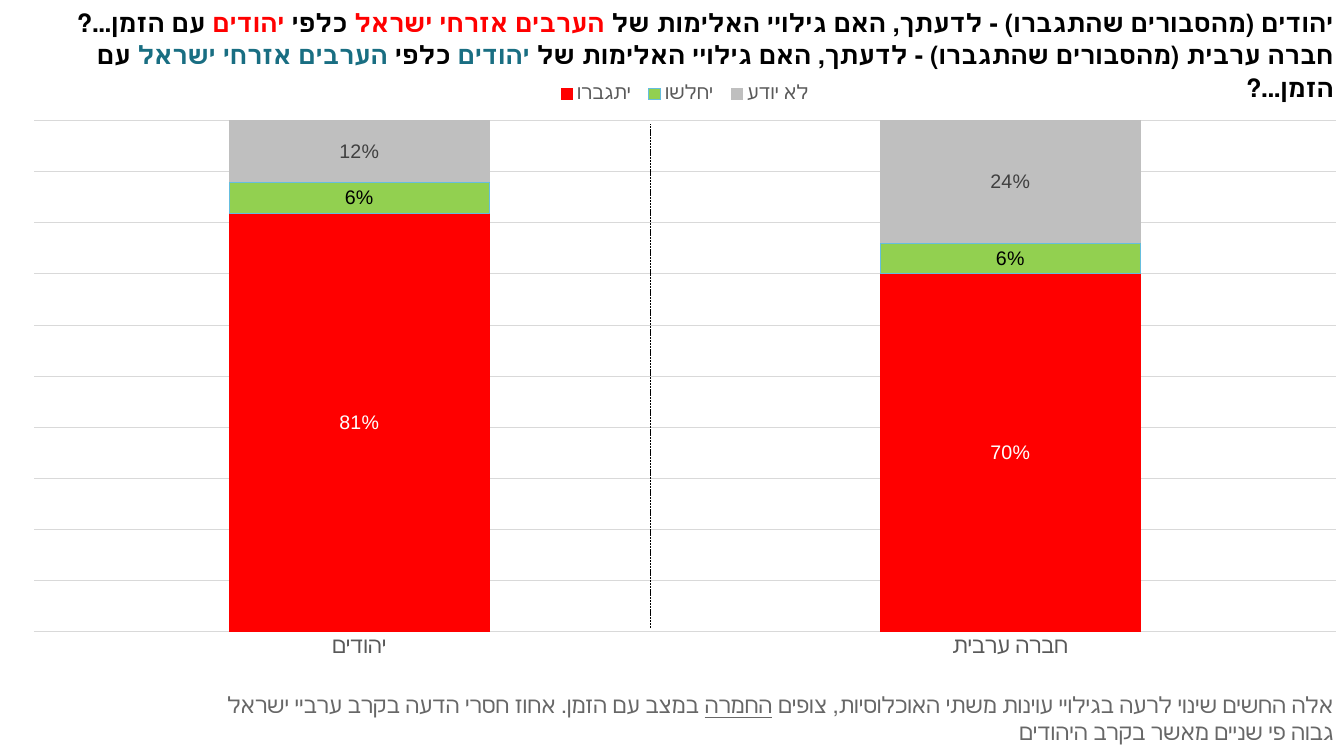
from lxml.etree import SubElement
from pptx import Presentation
from pptx.chart.data import CategoryChartData as ChartData
from pptx.dml.color import RGBColor as Rgb
from pptx.enum.chart import XL_CHART_TYPE as Kind, XL_LABEL_POSITION as Spot
from pptx.enum.chart import XL_LEGEND_POSITION as Side, XL_TICK_LABEL_POSITION as Tick
from pptx.enum.chart import XL_TICK_MARK as Mark
from pptx.enum.dml import MSO_LINE as Dash
from pptx.enum.shapes import MSO_CONNECTOR as Link
from pptx.enum.text import MSO_ANCHOR as Anchor, MSO_AUTO_SIZE as Fit, PP_ALIGN as Align
from pptx.oxml import parse_xml
from pptx.oxml.ns import qn
from pptx.util import Cm, Pt

HUE = {"black": "000000", "red": "FF0000", "teal": "196E82", "green": "92D050",
       "sky": "65BEDE", "gray": "BFBFBF", "grid": "D9D9D9", "label": "595959",
       "dark": "404040", "note": "676767", "white": "FFFFFF"}
FACE = "Arial"
ASK = [
    [("יהודים (מהסבורים שהתגברו) - לדעתך, האם גילויי האלימות של ", "black"),
     ("הערבים אזרחי ישראל ", "red"), ("כלפי ", "black"),
     ("יהודים ", "red"), ("עם הזמן...?", "black")],
    [("חברה ערבית (מהסבורים שהתגברו) - לדעתך, האם גילויי האלימות של ", "black"),
     ("יהודים", "teal"), (" כלפי ", "black"),
     ("הערבים אזרחי ישראל", "teal"), (" עם הזמן...?", "black")],
]
NOTE = ["אלה החשים שינוי לרעה בגילויי עוינות משתי האוכלוסיות, צופים ", "החמרה",
        " במצב עם הזמן. אחוז חסרי הדעה בקרב ערביי ישראל גבוה פי שניים מאשר בקרב היהודים"]
GROUPS = ["יהודים", "חברה ערבית"]
SERIES = [("יתגברו ", (0.81, 0.7), "red", "white"),
          ("יחלשו ", (0.06, 0.06), "green", "black"),
          ("לא יודע", (0.12, 0.24), "gray", "dark")]


def tint(name):
    return Rgb.from_string(HUE[name])


def style(font, size, hue):
    font.size = Pt(size)
    font.name = FACE
    font.color.rgb = tint(hue)


def stroke(line, hue, width):
    line.color.rgb = tint(hue)
    line.width = Pt(width)


def add_run(para, text, size, hue):
    run = para.add_run()
    run.text = text
    style(run.font, size, hue)
    return run


def set_rtl(para):
    para.alignment = Align.RIGHT
    para._p.get_or_add_pPr().set("rtl", "1")


def add_title(slide, x, y, w, h):
    title = slide.shapes.title
    title.left, title.top, title.width, title.height = x, y, w, h
    frame = title.text_frame
    frame.word_wrap = True
    frame.auto_size = Fit.NONE
    frame.vertical_anchor = Anchor.TOP
    for i, parts in enumerate(ASK):
        para = frame.add_paragraph() if i else frame.paragraphs[0]
        set_rtl(para)
        para.line_spacing = 1.07
        para.space_before = Pt(0)
        for text, hue in parts:
            add_run(para, text, 18, hue).font.bold = True


def set_plot(chart, x, y, w, h):
    area = chart._chartSpace.chart.plotArea
    for old in area.findall(qn("c:layout")):
        area.remove(old)
    rows = "".join(f'<c:{tag} val="{val}"/>' for tag, val in (
        ("layoutTarget", "inner"), ("xMode", "edge"), ("yMode", "edge"),
        ("x", x), ("y", y), ("w", w), ("h", h)))
    uri = "http://schemas.openxmlformats.org/drawingml/2006/chart"
    area.insert(0, parse_xml(f'<c:layout xmlns:c="{uri}"><c:manualLayout>{rows}'
                             '</c:manualLayout></c:layout>'))


def add_bars(slide, x, y, w, h):
    data = ChartData(number_format="0%")
    data.categories = GROUPS
    for name, vals, _, _ in SERIES:
        data.add_series(name, vals)
    chart = slide.shapes.add_chart(Kind.COLUMN_STACKED_100, x, y, w, h, data).chart
    style(chart.font, 10, "black")
    chart.has_title = False
    chart.has_legend = True
    chart.legend.position = Side.TOP
    chart.legend.include_in_layout = False
    style(chart.legend.font, 14, "label")

    cat = chart.category_axis
    cat.major_tick_mark = cat.minor_tick_mark = Mark.NONE
    cat.tick_label_position = Tick.NEXT_TO_AXIS
    cat.tick_labels.offset = 0
    style(cat.tick_labels.font, 16, "label")
    stroke(cat.format.line, "grid", 0.75)
    val = chart.value_axis
    val.visible = False
    val.minimum_scale, val.maximum_scale, val.major_unit = 0, 1, 0.1
    val.major_tick_mark = val.minor_tick_mark = Mark.NONE
    val.tick_labels.number_format = "0%"
    val.tick_labels.number_format_is_linked = False
    val.has_major_gridlines = True
    stroke(val.major_gridlines.format.line, "grid", 0.75)

    plot = chart.plots[0]
    plot.gap_width, plot.overlap = 150, 100
    plot.vary_by_categories = False
    for bar, (_, _, hue, ink) in zip(plot.series, SERIES):
        bar.format.fill.solid()
        bar.format.fill.fore_color.rgb = tint(hue)
        if hue == "green":
            stroke(bar.format.line, "sky", 0.75)
        tags = bar.data_labels
        tags.show_value = True
        tags.position = Spot.CENTER
        tags.number_format = "0%"
        tags.number_format_is_linked = False
        style(tags.font, 14, ink)
    set_plot(chart, 0, 0.08, 1, 0.854)


def add_split(slide, x, top, base):
    line = slide.shapes.add_connector(Link.STRAIGHT, x, base, x, top)
    stroke(line.line, "black", 0.5)
    line.line.dash_style = Dash.SQUARE_DOT
    SubElement(line._element.spPr, qn("a:effectLst"))


def add_note(slide, x, y, w, h):
    frame = slide.shapes.add_textbox(x, y, w, h).text_frame
    frame.word_wrap = True
    frame.auto_size = Fit.SHAPE_TO_FIT_TEXT
    para = frame.paragraphs[0]
    set_rtl(para)
    for i, text in enumerate(NOTE):
        add_run(para, text, 16, "note").font.underline = i == 1


def main():
    deck = Presentation()
    deck.slide_width, deck.slide_height = Cm(33.87), Cm(19.05)
    slide = deck.slides.add_slide(deck.slide_layouts[5])
    add_title(slide, 0, 0, deck.slide_width, Cm(1.83))
    add_bars(slide, Cm(0.84), Cm(1.83), Cm(32.84), Cm(15.09))
    add_split(slide, Cm(16.38), Cm(3.12), Cm(15.82))
    add_note(slide, Cm(5.16), Cm(17.3), Cm(28.7), Cm(1.63))
    deck.save("out.pptx")


if __name__ == "__main__":
    main()
